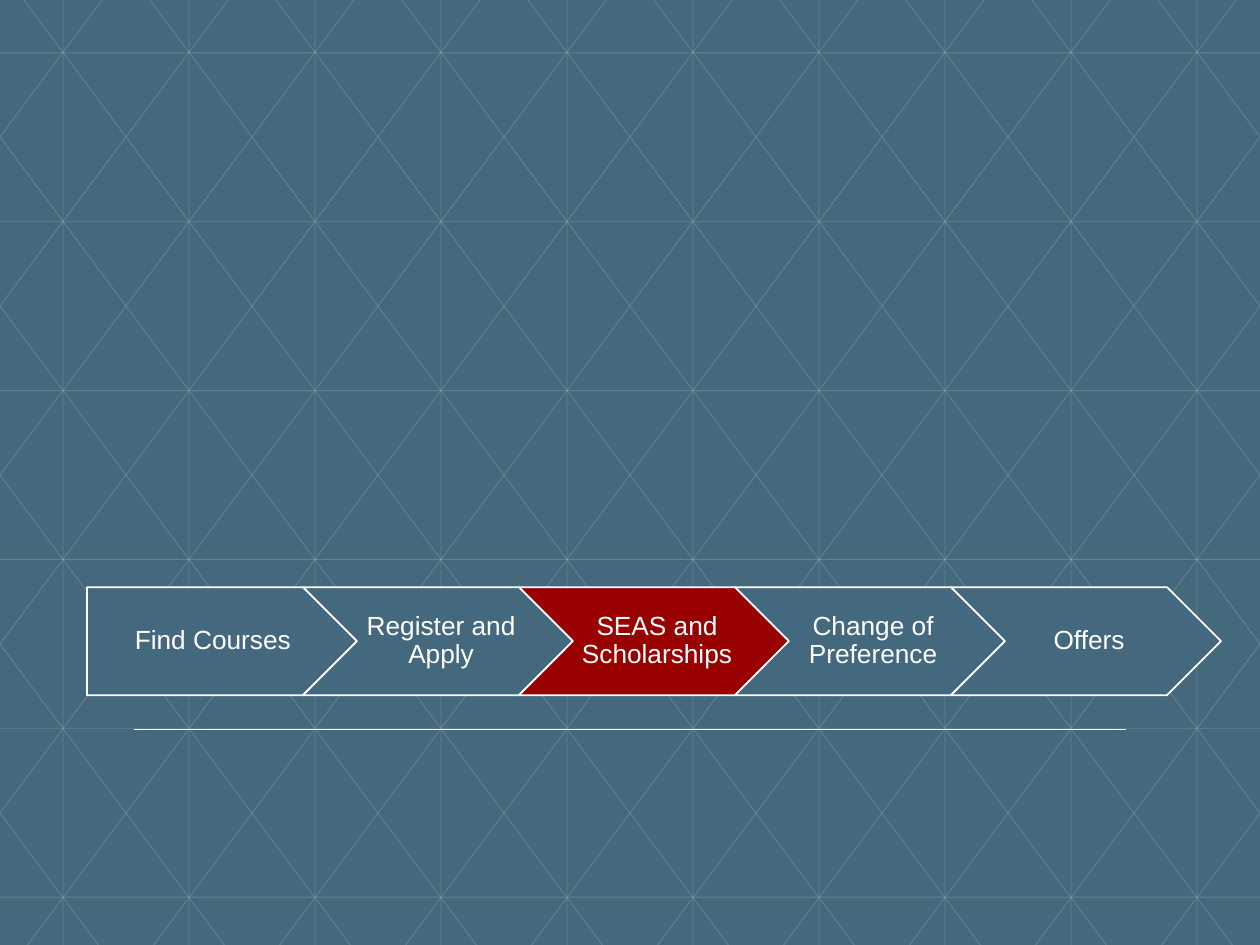
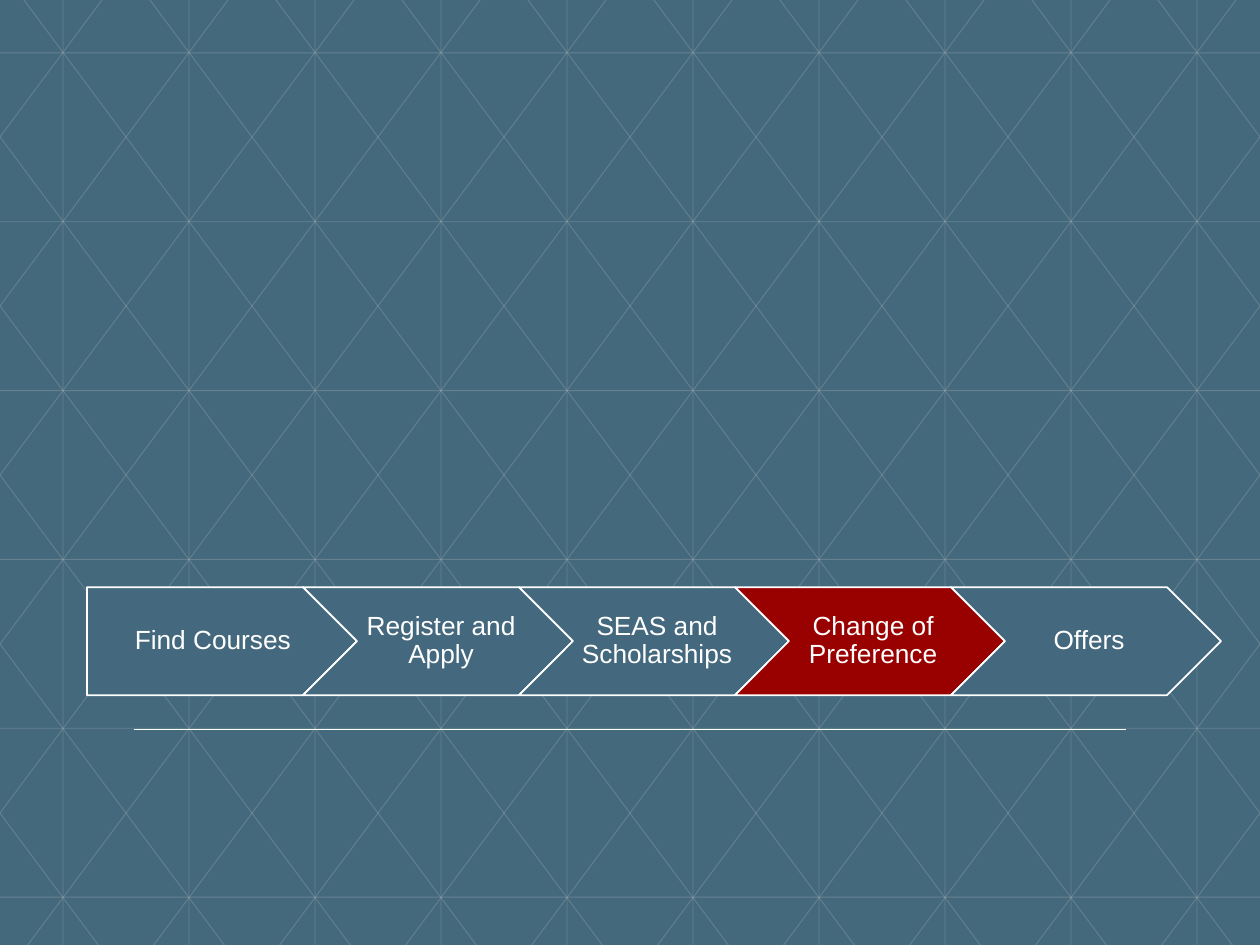
from lxml.etree import SubElement as Sub
from pptx import Presentation
from pptx.dml.color import RGBColor as Rgb
from pptx.enum.shapes import MSO_CONNECTOR as Link, MSO_SHAPE as Shape
from pptx.enum.text import MSO_ANCHOR as Anchor, PP_ALIGN as Align
from pptx.oxml.ns import qn
from pptx.util import Inches, Pt

WHITE = Rgb(0xFF, 0xFF, 0xFF)
MESH = Rgb(0xC4, 0xC7, 0xC8)
BACK = Rgb(0x44, 0x69, 0x7D)
STEP = Rgb(0x44, 0x68, 0x7D)
ACTIVE = Rgb(0x99, 0x00, 0x00)
FONT = "Arial"
WIDE, HIGH = 10, 7.5
COLS, ROWS = 10, 6
TOP, ROW = 0.42, 1.34
LEAN, SHIFT = 5.59, 0.19
LEFT, PITCH = 0.69, 12 / 7
SIZE = PITCH * 1.25, PITCH / 2
STEPS = ["Find Courses", "Register and Apply", "SEAS and Scholarships",
         "Change of Preference", "Offers"]


def draw_line(shapes, start, end, color, width, alpha=None):
    """Draw a flat line between two points in inches."""
    points = [Inches(n) for n in (*start, *end)]
    line = shapes.add_connector(Link.STRAIGHT, *points)
    line.line.color.rgb = color
    line.line.width = Pt(width)
    props = line.element.spPr
    if alpha:
        tint = props.find(".//" + qn("a:srgbClr"))
        Sub(tint, qn("a:alpha")).set("val", str(alpha * 1000))
    Sub(props, qn("a:effectLst"))


def slant(col):
    """Give the ends of a slanted mesh line, cut at the slide's edges."""
    top = SHIFT + col
    left, right = max(top, 0), min(top + LEAN, WIDE)
    return [(x, (x - top) * HIGH / LEAN) for x in (left, right)]


def draw_mesh(slide):
    """Draw the faint triangular mesh as one group."""
    ends = [((c + 0.5, 0), (c + 0.5, HIGH)) for c in range(COLS)]
    for row in range(ROWS):
        y = TOP + row * ROW
        ends.append(((0, y), (WIDE, y)))
    for col in range(-COLS // 2, COLS):
        pair = slant(col)
        ends += [pair, [(WIDE - x, y) for x, y in pair]]
    group = slide.shapes.add_group_shape()
    for start, end in ends:
        draw_line(group.shapes, start, end, MESH, 0.5, 25)


def draw_step(slide, index, label, fill):
    """Draw one labelled arrow of the process."""
    kind = Shape.CHEVRON if index else Shape.PENTAGON
    box = [Inches(n) for n in (LEFT + index * PITCH, 4.66, *SIZE)]
    step = slide.shapes.add_shape(kind, *box)
    step.shadow.inherit = False
    step.fill.solid()
    step.fill.fore_color.rgb = fill
    step.line.color.rgb = WHITE
    step.line.width = Pt(1)
    frame = step.text_frame
    frame.text = label
    frame.word_wrap = True
    frame.vertical_anchor = Anchor.MIDDLE
    frame.margin_left = Inches(0.05 if index else 0.07)
    frame.margin_right = 0
    frame.margin_top = frame.margin_bottom = Inches(0.04)
    para = frame.paragraphs[0]
    para.alignment = Align.CENTER
    para.line_spacing = 0.9
    para.font.name = FONT
    para.font.size = Pt(15)
    para.font.color.rgb = WHITE


def add_slide(deck, active):
    """Add a process slide with one step marked."""
    slide = deck.slides.add_slide(deck.slide_layouts[6])
    draw_mesh(slide)
    draw_line(slide.shapes, (1.06, 5.79), (8.94, 5.79), WHITE, 1)
    for index, label in enumerate(STEPS):
        draw_step(slide, index, label, ACTIVE if label == active else STEP)


def main():
    """Build and save the deck."""
    deck = Presentation()
    deck.slide_width, deck.slide_height = Inches(WIDE), Inches(HIGH)
    fill = deck.slide_master.background.fill
    fill.solid()
    fill.fore_color.rgb = BACK
    for active in STEPS[2:4]:
        add_slide(deck, active)
    deck.save("out.pptx")


if __name__ == "__main__":
    main()
